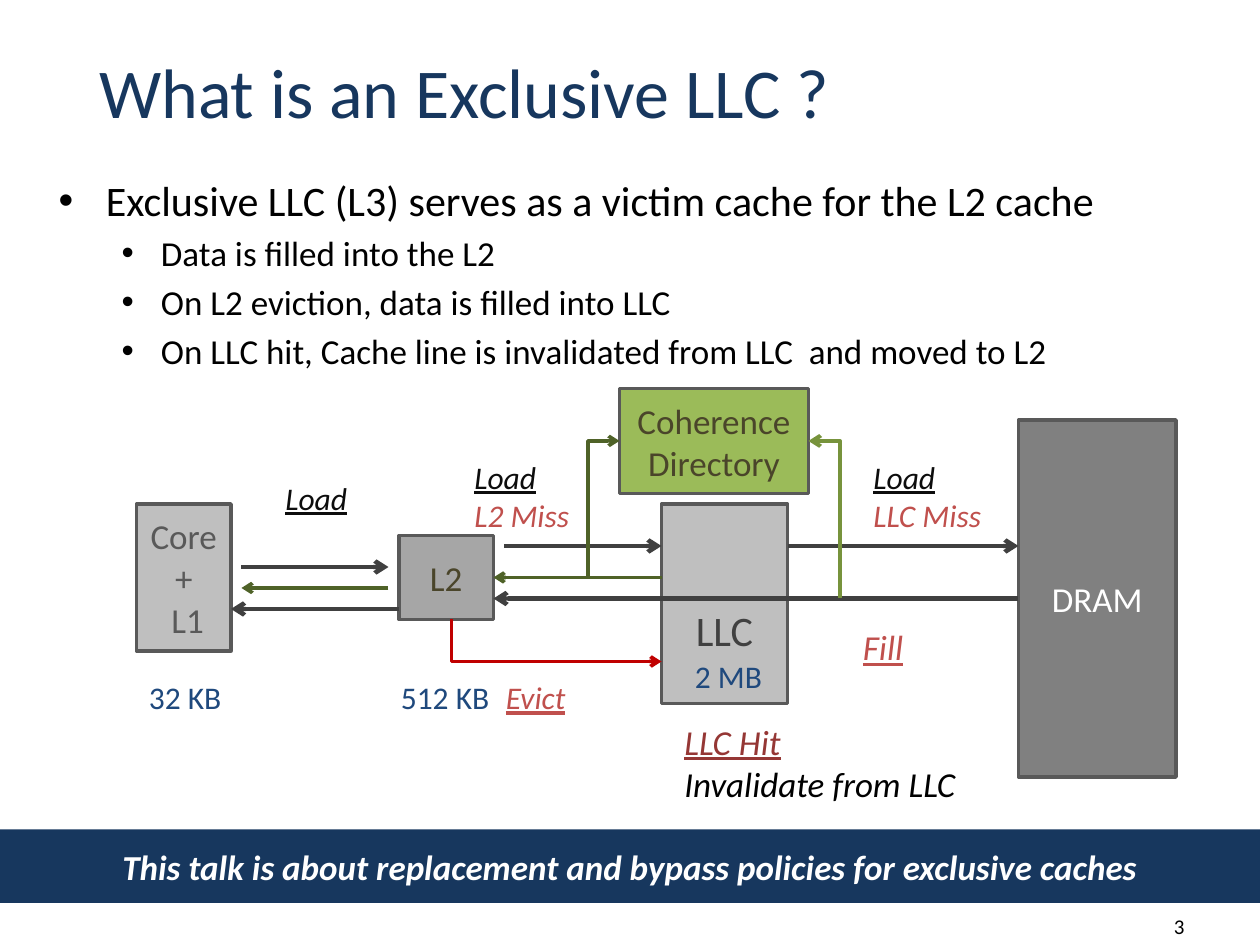
from lxml import etree
from pptx import Presentation
from pptx.dml.color import RGBColor
from pptx.enum.shapes import MSO_CONNECTOR, MSO_SHAPE
from pptx.enum.text import MSO_ANCHOR, MSO_AUTO_SIZE, PP_ALIGN
from pptx.oxml.ns import qn
from pptx.util import Emu, Pt

PX = 9525
FONT = "Calibri"
STRAIGHT, ELBOW = MSO_CONNECTOR.STRAIGHT, MSO_CONNECTOR.ELBOW
RECTANGLE = MSO_SHAPE.RECTANGLE
MIDDLE, TOP = MSO_ANCHOR.MIDDLE, MSO_ANCHOR.TOP
LEFT, CENTER, RIGHT = PP_ALIGN.LEFT, PP_ALIGN.CENTER, PP_ALIGN.RIGHT
FIXED, GROW = MSO_AUTO_SIZE.NONE, MSO_AUTO_SIZE.SHAPE_TO_FIT_TEXT
LEFT_SIDE, RIGHT_SIDE = 1, 3

NAVY, BLUE, RED, DARK_RED = "17375E", "1F497D", "C0504D", "953735"
BLACK, INK, WHITE, OUTLINE = "000000", "0D0D0D", "FFFFFF", "595959"
CHARCOAL, OLIVE, GREEN, EVICT_RED = "404040", "4F6228", "77933C", "C00000"


def px(*lengths):
    return [Emu(length * PX) for length in lengths]


def color(value):
    return RGBColor.from_string(value)


def write(shape, lines, size=20, ink=BLACK, bold=False, italic=False,
          underline=False, align=LEFT, anchor=TOP, wrap=True, fit=FIXED):
    frame = shape.text_frame
    frame.word_wrap = wrap
    frame.auto_size = fit
    frame.vertical_anchor = anchor
    for index, line in enumerate(lines):
        para = frame.paragraphs[0] if index == 0 else frame.add_paragraph()
        para.alignment = align
        span = para.add_run()
        span.text = line
        font = span.font
        font.name, font.size, font.color.rgb = FONT, Pt(size), color(ink)
        font.bold, font.italic, font.underline = bold, italic, underline
    return frame


def place(shape, box):
    shape.left, shape.top, shape.width, shape.height = px(*box)


def add_rectangle(page, box, fill, outline=None):
    shape = page.shapes.add_shape(RECTANGLE, *px(*box))
    shape.shadow.inherit = False
    shape.fill.solid()
    shape.fill.fore_color.rgb = color(fill)
    if outline:
        shape.line.color.rgb = color(outline)
        shape.line.width = Pt(2)
    else:
        shape.line.fill.background()
    return shape


def add_arrow(page, start, end, ink, width, kind=STRAIGHT):
    arrow = page.shapes.add_connector(kind, *px(*start, *end))
    arrow.line.color.rgb = color(ink)
    arrow.line.width = Pt(width)
    properties = arrow._element.spPr
    outline = properties.find(qn("a:ln"))
    etree.SubElement(outline, qn("a:tailEnd"), type="arrow")
    etree.SubElement(properties, qn("a:effectLst"))
    if kind == ELBOW:
        adjustments = properties.find(qn("a:prstGeom")).get_or_add_avLst()
        etree.SubElement(adjustments, qn("a:gd"), name="adj1", fmla="val 0")
    return arrow


def add_title(page, box):
    title = page.shapes.title
    place(title, box)
    write(title, ["What is an Exclusive LLC ?"], size=40, ink=NAVY, anchor=MIDDLE)


def add_bullets(page, box):
    body = page.placeholders[1]
    place(body, box)
    frame = write(body, [
        "Exclusive LLC (L3) serves as a victim cache for the L2 cache",
        "Data is filled into the L2",
        "On L2 eviction, data is filled into LLC",
        "On LLC hit, Cache line is invalidated from LLC  and moved to L2",
    ])
    for index, para in enumerate(frame.paragraphs):
        para.level = min(index, 1)
        margin, hanging = (78, 30) if para.level else (36, 36)
        para.runs[0].font.size = Pt(20 if para.level else 24)
        properties = para._p.get_or_add_pPr()
        properties.set("marL", str(margin * PX))
        properties.set("indent", str(-hanging * PX))
        etree.SubElement(properties, qn("a:buFont"), typeface="Arial")
        etree.SubElement(properties, qn("a:buChar"), char="•")


def add_diagram(page, box):
    left, top = box[:2]

    def at(x, y):
        return left + x, top + y

    def block(x, y, width, height, fill, lines, ink, size=20):
        shape = add_rectangle(page, (*at(x, y), width, height), fill, OUTLINE)
        write(shape, lines, size=size, ink=ink, align=CENTER, anchor=MIDDLE)
        return shape

    def label(x, y, width, height, lines, inks, size=18, plain=False):
        shape = page.shapes.add_textbox(*px(*at(x, y), width, height))
        frame = write(shape, lines, size=size, italic=not plain,
                      wrap=False, fit=GROW)
        for index, (para, ink) in enumerate(zip(frame.paragraphs, inks)):
            para.runs[0].font.color.rgb = color(ink)
            para.runs[0].font.underline = index == 0 and not plain

    llc = block(400, 88, 96, 152, "BFBFBF", ["LLC"], CHARCOAL, size=24)
    llc.text_frame.margin_top = Emu(44 * PX)
    l2 = block(200, 112, 72, 64, "A6A6A6", ["L2"], "4A452A")
    dram = block(672, 24, 120, 272, "808080", ["DRAM"], WHITE)
    block(0, 88, 72, 112, "BFBFBF", ["Core", "+", " L1"], OUTLINE)
    block(368, 0, 144, 80, "9BBB59", ["Coherence Directory"], "4A452A")

    for start, end in [
        ((80, 136), (192, 136)),
        ((280, 120), (400, 120)),
        ((496, 120), (672, 120)),
        ((200, 168), (72, 168)),
    ]:
        add_arrow(page, at(*start), at(*end), CHARCOAL, 2.5)
    fill = add_arrow(page, at(672, 160), at(272, 160), CHARCOAL, 2.5)
    fill.begin_connect(dram, LEFT_SIDE)
    add_arrow(page, at(192, 152), at(80, 152), OLIVE, 2)
    hit = add_arrow(page, at(400, 144), at(272, 144), OLIVE, 2)
    hit.end_connect(l2, RIGHT_SIDE)
    for start, end, ink, width in [
        ((240, 176), (400, 208), EVICT_RED, 2),
        ((536, 160), (512, 40), GREEN, 2.25),
        ((344, 144), (368, 40), OLIVE, 2),
    ]:
        add_arrow(page, at(*start), at(*end), ink, width, ELBOW)

    label(104, 64, 67, 38, ["Load"], [INK])
    label(248, 48, 92, 68, ["Load", "L2 Miss"], [INK, RED])
    label(552, 48, 103, 68, ["Load", "LLC Miss"], [INK, RED])
    label(544, 176, 51, 42, ["Fill"], [RED], size=20)
    label(272, 216, 65, 38, ["Evict"], [RED])
    label(408, 248, 228, 74, ["LLC Hit", "Invalidate from LLC"],
          [DARK_RED, BLACK], size=20)
    for x, y, width, capacity in [
        (0, 216, 75, "32 KB"), (192, 216, 87, "512 KB"), (416, 200, 77, "2 MB"),
    ]:
        label(x, y, width, 38, [capacity], [BLUE], plain=True)


def add_banner(page, box):
    write(add_rectangle(page, box, NAVY),
          ["This talk is about replacement and bypass policies for exclusive caches"],
          ink=WHITE, bold=True, italic=True, align=CENTER, anchor=MIDDLE)


def add_page_number(page, box):
    write(page.shapes.add_textbox(*px(*box)), ["3"], size=12, align=RIGHT)


def main():
    deck = Presentation()
    deck.slide_width, deck.slide_height = px(960, 720)
    page = deck.slides.add_slide(deck.slide_layouts[1])
    add_banner(page, (0, 632, 960, 56))
    add_title(page, (66, 9, 864, 120))
    add_bullets(page, (35, 128, 888, 176))
    add_diagram(page, (104, 296, 792, 322))
    add_page_number(page, (688, 691, 224, 38))
    deck.save("out.pptx")


if __name__ == "__main__":
    main()
